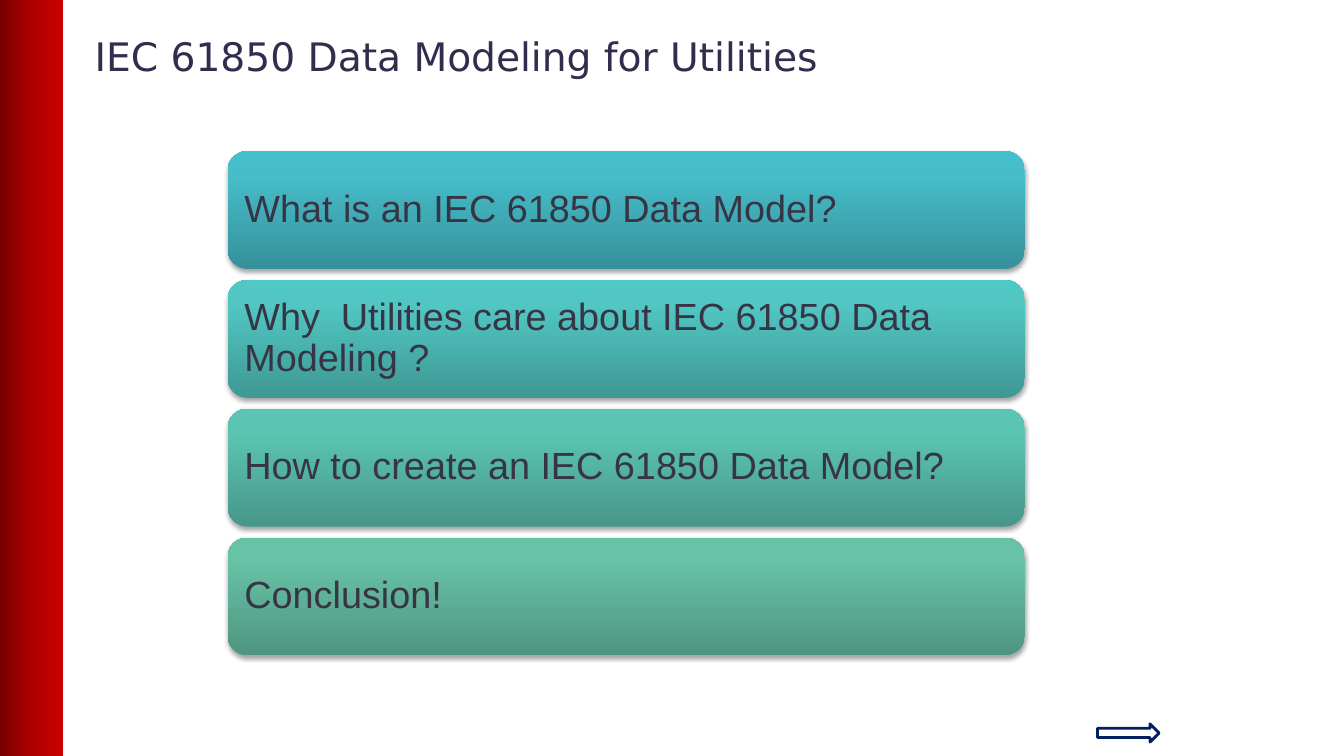
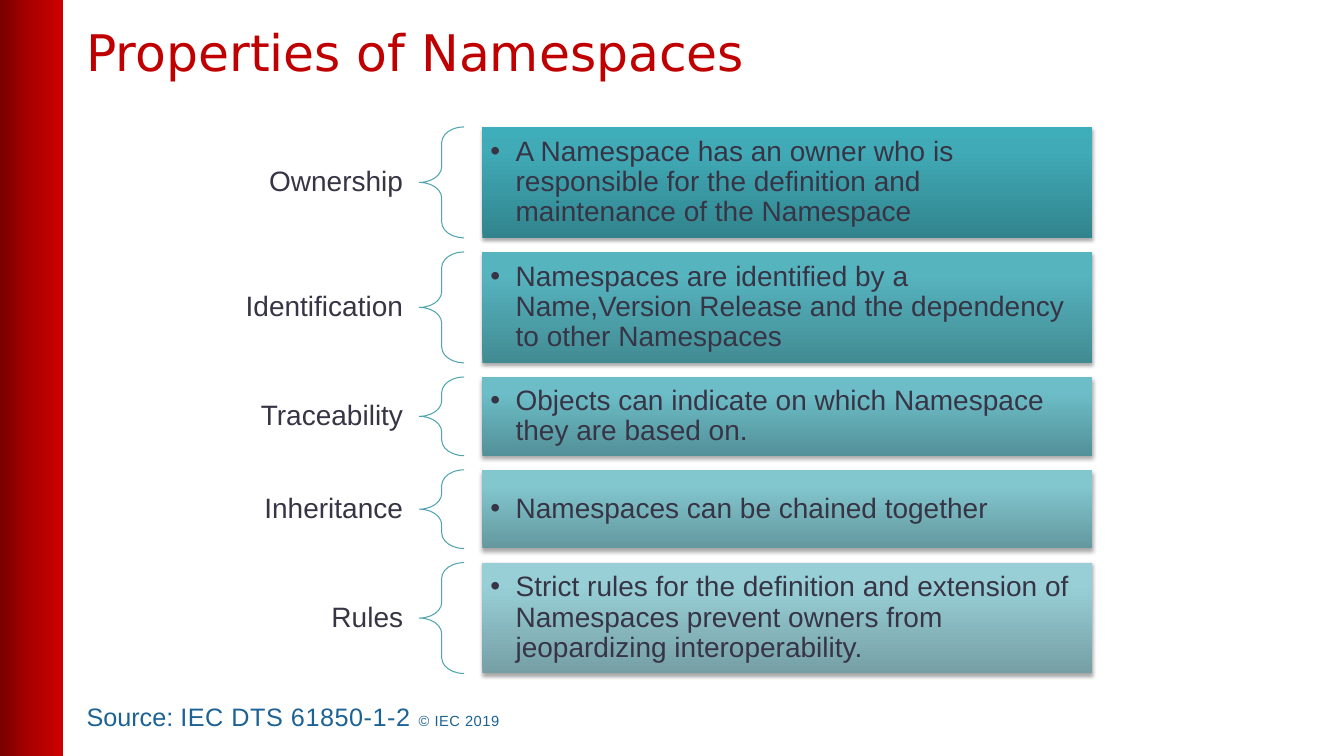
from copy import deepcopy
from dataclasses import dataclass

from lxml.etree import SubElement
from pptx import Presentation
from pptx.dml.color import RGBColor
from pptx.enum.shapes import MSO_SHAPE
from pptx.enum.text import MSO_ANCHOR, PP_ALIGN
from pptx.oxml.ns import qn
from pptx.util import Pt


@dataclass(frozen=True)
class Theme:
    head: str = "DejaVu Sans"
    body: str = "Arial"
    ink: str = "373545"
    plum: str = "312D4D"
    red: str = "C00000"
    navy: str = "002060"
    teal: str = "50A5AE"
    blue: str = "1C6294"
    band: tuple = ("790000", "AC0000", "CC0000")
    topic: float = 27
    row: float = 20
    source: float = 18
    small: float = 10.5


THEME = Theme()

TOPICS = [
    ("What is an IEC 61850 Data Model?", ("36919B", "46BDC9", "44BFCD")),
    ("Why  Utilities care about IEC 61850 Data Modeling ?",
     ("3F9995", "51C6C2", "50C9C5")),
    ("How to create an IEC 61850 Data Model?",
     ("479789", "5CC4B2", "5BC7B4")),
    ("Conclusion!", ("4F9580", "67C2A6", "66C4A7")),
]

TALL, SHORT = 79.2, 56.2
ROWS = [
    ("Ownership", TALL, ("31848D", "40ABB7", "3EAEBA"),
     "A Namespace has an owner who is responsible for the definition "
     "and maintenance of the Namespace"),
    ("Identification", TALL, ("428B93", "56B4BF", "54B7C2"),
     "Namespaces are identified by a Name,Version Release and the "
     "dependency to other Namespaces"),
    ("Traceability", SHORT, ("539199", "6CBDC7", "6BBFC9"),
     "Objects can indicate on which Namespace they are based on."),
    ("Inheritance", SHORT, ("64989F", "82C6CE", "81C8D1"),
     "Namespaces can be chained together"),
    ("Rules", TALL, ("759FA5", "98CFD6", "98D1D8"),
     "Strict rules for the definition and extension of Namespaces "
     "prevent owners from jeopardizing interoperability."),
]


def color(code):
    return RGBColor.from_string(code)


def add_form(slide, kind, area, line=None, width=0):
    form = slide.shapes.add_shape(kind, *map(Pt, area))
    form.shadow.inherit = False
    form.fill.background()
    if line:
        form.line.color.rgb = color(line)
        form.line.width = Pt(width)
    else:
        form.line.fill.background()
    return form


def blend(form, codes, middle, angle):
    form.fill.gradient()
    form.fill.gradient_angle = angle
    stops = form.element.spPr.find(qn("a:gradFill")).find(qn("a:gsLst"))
    stops.append(deepcopy(stops[-1]))
    for stop, code, place in zip(form.fill.gradient_stops, codes,
                                 (0, middle, 1)):
        stop.color.rgb = color(code)
        stop.position = place


def cast(form):
    effects = form.element.spPr.find(qn("a:effectLst"))
    shade = SubElement(effects, qn("a:outerShdw"), blurRad=str(Pt(3.1)),
                       dist=str(Pt(1.8)), dir="5400000", rotWithShape="0")
    black = SubElement(shade, qn("a:srgbClr"), val="000000")
    SubElement(black, qn("a:alpha"), val="35000")


def add_card(slide, kind, area, codes):
    card = add_form(slide, kind, area)
    blend(card, codes, 0.8, 90)
    cast(card)
    return card


def add_box(slide, area):
    return slide.shapes.add_textbox(*map(Pt, area))


def style(para, face, size, code):
    para.font.name = face
    para.font.size = Pt(size)
    para.font.color.rgb = color(code)


def write(form, text, size, face=THEME.body, code=THEME.ink,
          align=PP_ALIGN.LEFT, anchor=MSO_ANCHOR.MIDDLE, inset=(7.2, 3.6),
          space=0.9, dot=False):
    frame = form.text_frame
    frame.word_wrap = True
    frame.vertical_anchor = anchor
    frame.margin_left = frame.margin_right = Pt(inset[0])
    frame.margin_top = frame.margin_bottom = Pt(inset[1])
    para = frame.paragraphs[0]
    para.text = text
    para.alignment = align
    para.line_spacing = space
    if dot:
        props = para._p.get_or_add_pPr()
        props.set("marL", str(Pt(18)))
        props.set("indent", str(-Pt(18)))
        SubElement(props, qn("a:buFont"), typeface=THEME.body)
        SubElement(props, qn("a:buChar"), char="•")
    style(para, face, size, code)


def add_slide(deck, title, area, size, code):
    slide = deck.slides.add_slide(deck.slide_layouts[6])
    band = add_form(slide, MSO_SHAPE.RECTANGLE, (0, 0, 45, 540))
    blend(band, THEME.band, 0.5, 0)
    write(add_box(slide, area), title, size, THEME.head, code,
          anchor=MSO_ANCHOR.BOTTOM, space=1.0)
    return slide


def add_row(slide, top, label, height, codes, text):
    write(add_box(slide, (139.7, top, 159.8, height)), label, THEME.row,
          align=PP_ALIGN.RIGHT, inset=(11.5, 4.3))
    brace = add_form(slide, MSO_SHAPE.LEFT_BRACE,
                     (299.5, top, 32, height), THEME.teal, 0.75)
    brace.adjustments[0] = 0.35
    brace.adjustments[1] = 0.5
    card = add_card(slide, MSO_SHAPE.RECTANGLE,
                    (344.5, top, 435.5, height), codes)
    write(card, text, THEME.row, inset=(5.8, 5.8), dot=True)


def add_source(slide):
    frame = add_box(slide, (54.7, 497.5, 315.4, 30)).text_frame
    frame.word_wrap = True
    para = frame.paragraphs[0]
    style(para, THEME.body, THEME.source, THEME.blue)
    for text, size, gap in (("Source: ", THEME.source, 0),
                            ("IEC DTS 61850-1-2 ", THEME.source, 40),
                            ("© IEC 2019", THEME.small, 40)):
        run = para.add_run()
        run.text = text
        run.font.size = Pt(size)
        if gap:
            run._r.get_or_add_rPr().set("spc", str(gap))


def add_topics(deck):
    slide = add_slide(deck, "IEC 61850 Data Modeling for Utilities",
                      (60.5, 15.1, 850.3, 45.4), 28, THEME.plum)
    add_form(slide, MSO_SHAPE.RIGHT_ARROW, (784, 517, 44, 13),
             THEME.navy, 2)
    for index, (text, codes) in enumerate(TOPICS):
        card = add_card(slide, MSO_SHAPE.ROUNDED_RECTANGLE,
                        (162.5, 108 + 92 * index, 569.5, 84.2), codes)
        write(card, text, THEME.topic, inset=(8, 8))


def add_traits(deck):
    slide = add_slide(deck, "Properties of Namespaces",
                      (54.7, 16.6, 889.9, 45.4), 36, THEME.red)
    top, gap = 90.7, 10.1
    for label, height, codes, text in ROWS:
        add_row(slide, top, label, height, codes, text)
        top += height + gap
    add_source(slide)


def main():
    deck = Presentation()
    deck.slide_width, deck.slide_height = Pt(960), Pt(540)
    add_topics(deck)
    add_traits(deck)
    deck.save("out.pptx")


if __name__ == "__main__":
    main()
